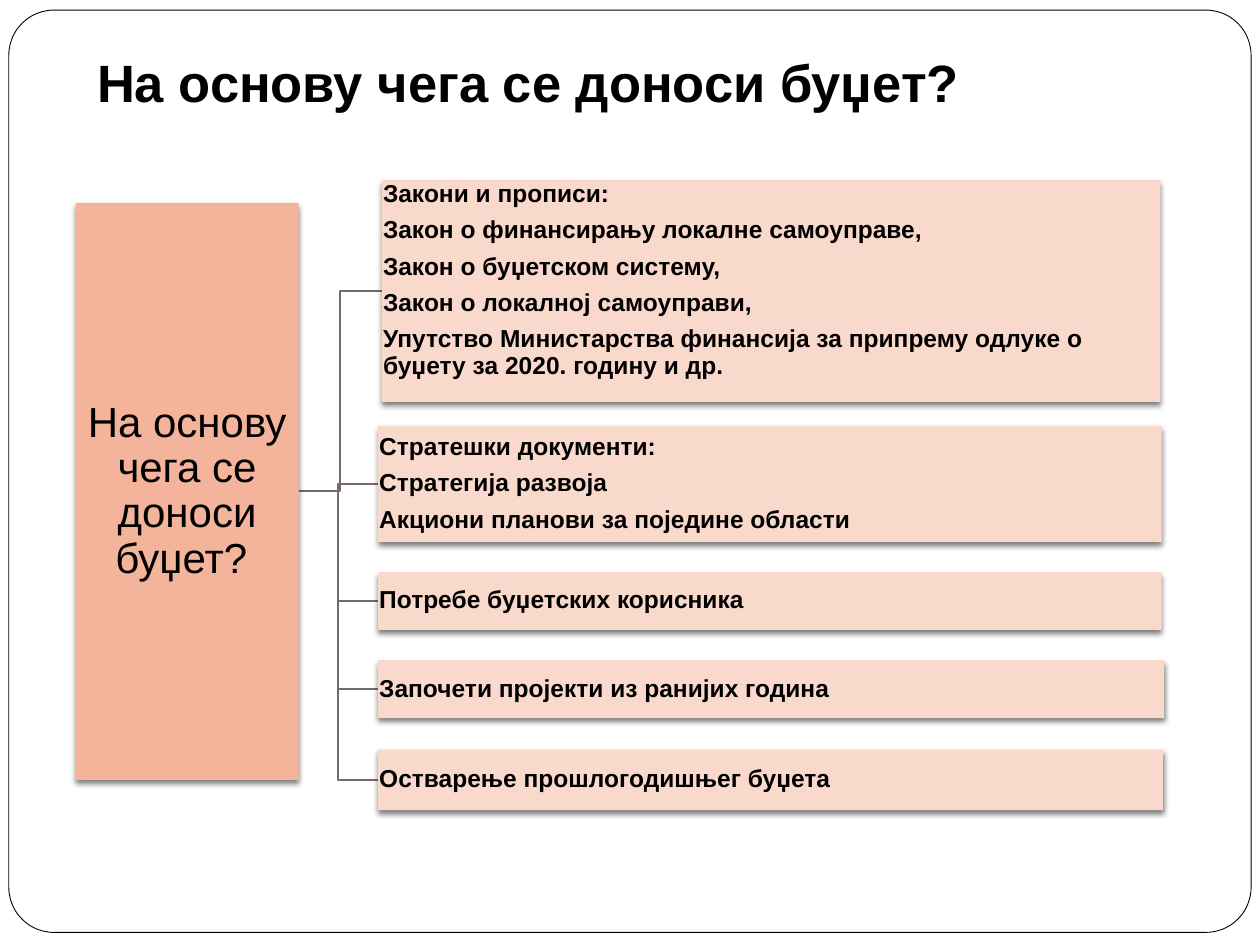
from lxml.etree import SubElement as Sub
from pptx import Presentation
from pptx.dml.color import RGBColor as Rgb
from pptx.enum.shapes import MSO_SHAPE as Shape
from pptx.enum.text import MSO_ANCHOR as Anchor, PP_ALIGN as Align
from pptx.oxml.ns import qn
from pptx.util import Inches, Pt

BLACK = Rgb(0, 0, 0)
WHITE = Rgb(255, 255, 255)
CORAL = Rgb(0xF4, 0xB3, 0x9B)
PEACH = Rgb(0xFA, 0xD9, 0xCD)
GREY = Rgb(0x74, 0x6A, 0x6B)

TITLE = "На основу чега се доноси буџет?"
ROOT = (0.6, 1.61, 1.77, 4.58)
ITEMS = [
    ((3.03, 1.43, 6.18, 1.76), Anchor.TOP, [
        "Закони и прописи:",
        "Закон о финансирању локалне самоуправе,",
        "Закон о буџетском систему,",
        "Закон о локалној самоуправи,",
        "Упутство Министарства финансија за припрему одлуке о "
        "буџету за 2020. годину и др."]),
    ((3, 3.38, 6.22, 0.92), Anchor.MIDDLE, [
        "Стратешки документи:",
        "Стратегија развоја",
        "Акциони планови за поједине области"]),
    ((3, 4.54, 6.22, 0.46), Anchor.MIDDLE, ["Потребе буџетских корисника"]),
    ((3, 5.24, 6.24, 0.46), Anchor.MIDDLE, ["Започети пројекти из ранијих година"]),
    ((3, 5.95, 6.23, 0.48), Anchor.MIDDLE, ["Остварење прошлогодишњег буџета"]),
]


def apply(obj, style):
    for name, value in style.items():
        setattr(obj, name, value)


def write(shape, lines, pads, anchor, font, para):
    frame = shape.text_frame
    frame.text = "\n".join(lines)
    sides = ("margin_left", "margin_top", "margin_right", "margin_bottom")
    apply(frame, {"word_wrap": True, "vertical_anchor": anchor,
                  **{side: Inches(pad) for side, pad in zip(sides, pads)}})
    for par in frame.paragraphs:
        apply(par, para)
        for run in par.runs:
            apply(run.font, {"name": "Arial", **font})
            run.font.color.rgb = BLACK


def shade(shape):
    shape.shadow.inherit = False
    effect = shape._element.spPr.find(qn("a:effectLst"))
    outer = Sub(effect, qn("a:outerShdw"), blurRad=str(Pt(3)),
                dist=str(Pt(2)), dir="5400000", rotWithShape="0")
    tint = Sub(outer, qn("a:srgbClr"), val=str(BLACK))
    Sub(tint, qn("a:alpha"), val="50000")


def add_frame(slide, box):
    frame = slide.shapes.add_shape(Shape.ROUNDED_RECTANGLE, *map(Inches, box))
    frame.adjustments[0] = 0.049
    frame.shadow.inherit = False
    frame.fill.solid()
    frame.fill.fore_color.rgb = WHITE
    frame.line.color.rgb = BLACK
    frame.line.width = Pt(0.5)
    slide.shapes._spTree.insert(2, frame._element)


def add_title(slide, box):
    title = slide.shapes.title
    apply(title, dict(zip(("left", "top", "width", "height"), map(Inches, box))))
    write(title, [TITLE], (0.1, 0.05, 0.1, 0.1), Anchor.BOTTOM,
          {"size": Pt(30), "bold": True}, {"alignment": Align.LEFT})


def add_card(slide, box, color, lines, pad, anchor, font, align):
    card = slide.shapes.add_shape(Shape.RECTANGLE, *map(Inches, box))
    card.fill.solid()
    card.fill.fore_color.rgb = color
    card.line.fill.background()
    shade(card)
    write(card, lines, [pad] * 4, anchor, font,
          {"alignment": align, "line_spacing": 0.9,
           "space_after": Pt(font["size"].pt * 0.4)})


def add_link(slide, root, box):
    x, y = root[0] + root[2], root[1] + root[3] / 2
    end, row = box[0], box[1] + box[3] / 2
    mid = (x + end) / 2
    points = [(Inches(a), Inches(b)) for a, b in
              ((x, y), (mid, y), (mid, row), (end, row))]
    path = slide.shapes.build_freeform(*points[0])
    path.add_line_segments(points[1:], close=False)
    link = path.convert_to_shape()
    link.shadow.inherit = False
    link.fill.background()
    link.line.color.rgb = GREY
    link.line.width = Pt(1)


def add_tree(slide, root, items):
    for box, _, _ in reversed(items):
        add_link(slide, root, box)
    add_card(slide, root, CORAL, [TITLE + " "], 0.02, Anchor.MIDDLE,
             {"size": Pt(24), "bold": False}, Align.CENTER)
    for box, anchor, lines in items:
        add_card(slide, box, PEACH, lines, 0.01, anchor,
                 {"size": Pt(14), "bold": True}, Align.LEFT)


def main():
    deck = Presentation()
    apply(deck, {"slide_width": Inches(10), "slide_height": Inches(7.5)})
    slide = deck.slides.add_slide(deck.slide_layouts[5])
    add_frame(slide, (0.07, 0.08, 9.86, 7.32))
    add_title(slide, (0.67, 0.21, 9, 0.79))
    add_tree(slide, ROOT, ITEMS)
    deck.save("out.pptx")


if __name__ == "__main__":
    main()
